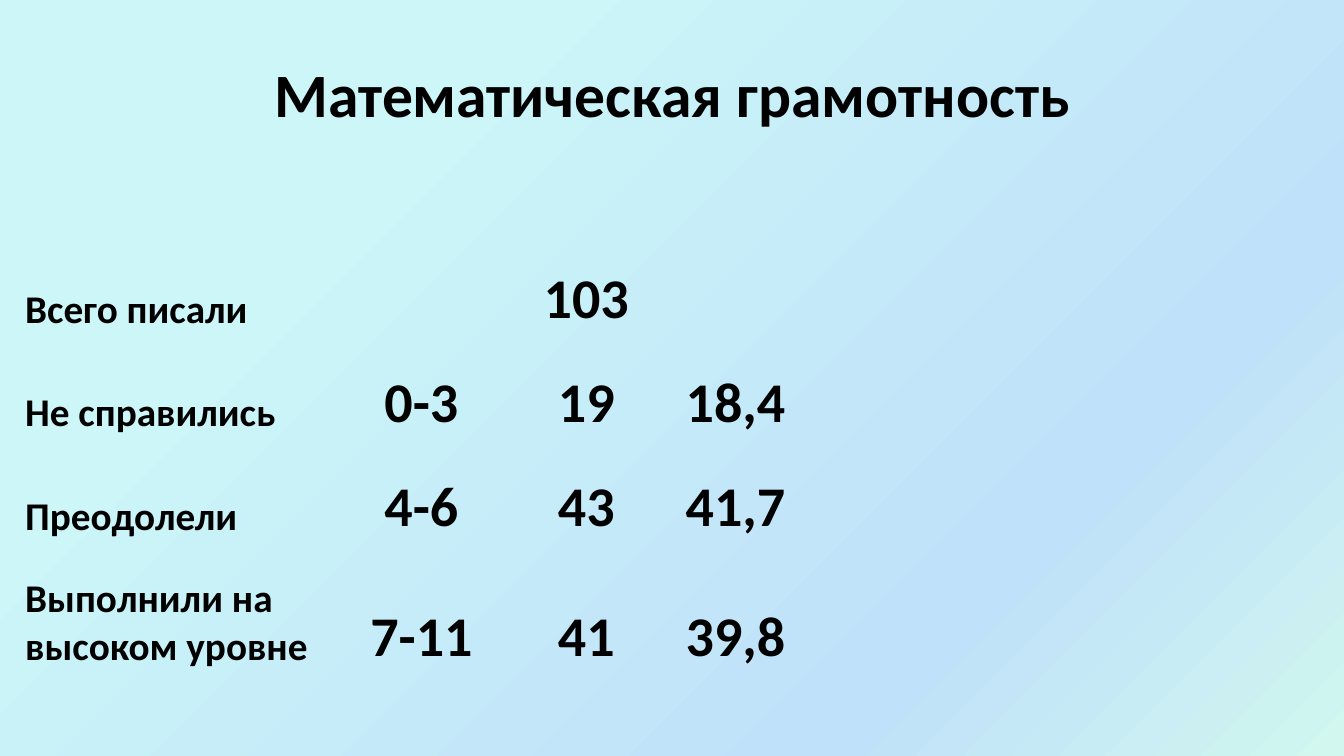
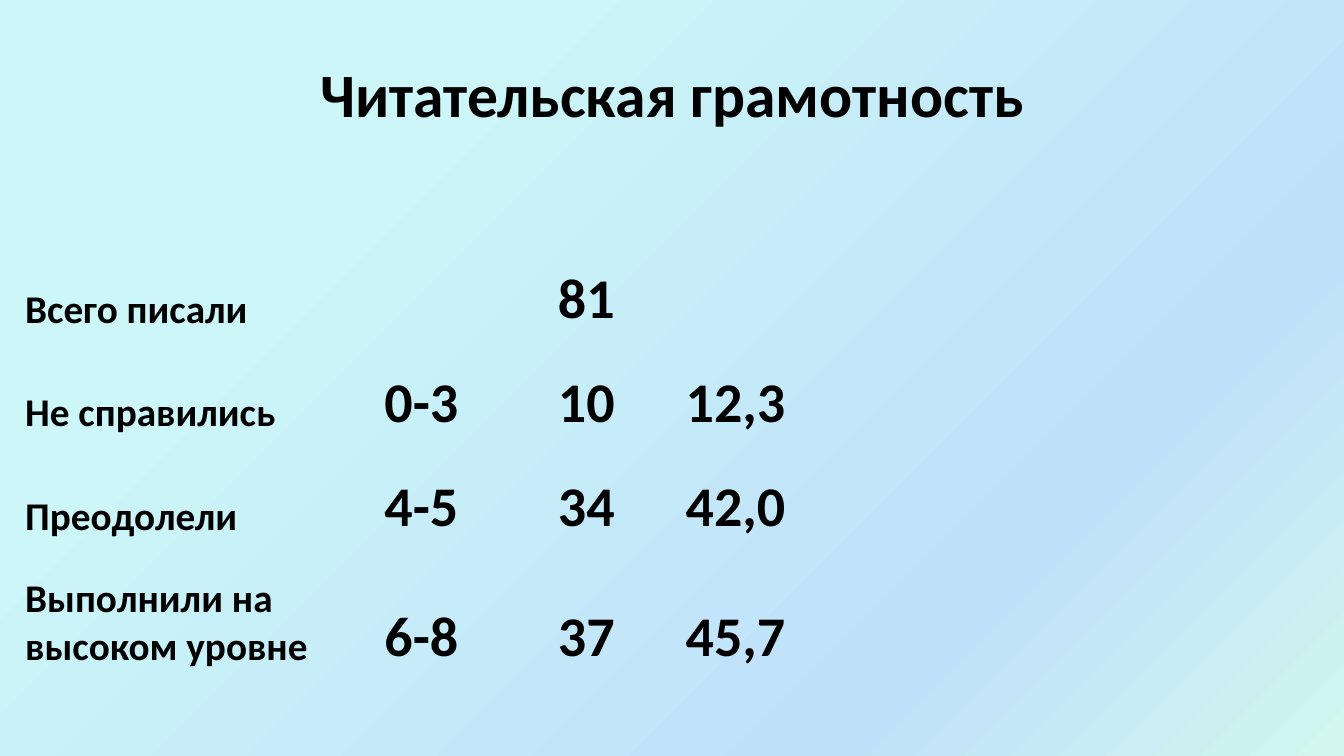
from copy import deepcopy

from pptx import Presentation
from pptx.dml.color import RGBColor
from pptx.enum.text import MSO_ANCHOR, PP_ALIGN
from pptx.util import Inches, Pt

LEFT, CENTER = PP_ALIGN.LEFT, PP_ALIGN.CENTER
MIDDLE, BOTTOM = MSO_ANCHOR.MIDDLE, MSO_ANCHOR.BOTTOM

FONT = "Calibri"
COLORS = {"text": "000000", "aqua": "CCF6F8", "blue": "BFE1F9", "mint": "D1F7EF"}
BACKGROUND = [("aqua", 0.25), ("blue", 0.75), ("mint", 1)]
NO_STYLE = "{2D5ABB26-0587-4C30-8999-92F81FD0307C}"

TITLE_BOX = (0.67, 0.3, 12, 1.25)
TABLE_BOX = (0.24, 2.28, 7.67, 4.38)
COL_WIDTHS = [3.17, 1.54, 1.73, 1.23]
ROW_HEIGHTS = [1.03, 1.03, 1.03, 1.29]
LABELS = ["Всего писали", "Не справились", "Преодолели", "Выполнили на высоком уровне"]

RESULTS = {
    "Математическая грамотность": [
        ("", "103", ""),
        ("0-3", "19", "18,4"),
        ("4-6", "43", "41,7"),
        ("7-11", "41", "39,8"),
    ],
    "Читательская грамотность": [
        ("", "81", ""),
        ("0-3", "10", "12,3"),
        ("4-5", "34", "42,0"),
        ("6-8", "37", "45,7"),
    ],
}


def write(tf, text, size=40, align=CENTER, color="text", bold=True):
    p = tf.paragraphs[0]
    p.alignment = align
    r = p.add_run()
    r.text = text
    r.font.name = FONT
    r.font.size = Pt(size)
    r.font.bold = bold
    r.font.color.rgb = RGBColor.from_string(COLORS[color])


def set_background(master):
    fill = master.background.fill
    fill.gradient()
    fill.gradient_angle = 315
    stop_list = master.element.xpath(".//p:bg//a:gsLst")[0]
    stop_list.append(deepcopy(stop_list[-1]))
    for stop, (color, position) in zip(fill.gradient_stops, BACKGROUND):
        stop.color.rgb = RGBColor.from_string(COLORS[color])
        stop.position = position


def add_title(s, text, box):
    sp = s.shapes.title
    sp.left, sp.top, sp.width, sp.height = map(Inches, box)
    tf = sp.text_frame
    tf.vertical_anchor = MIDDLE
    write(tf, text, size=44)


def fill_cell(cell, text, **style):
    cell.fill.background()
    cell.vertical_anchor = BOTTOM
    cell.margin_left = cell.margin_right = cell.margin_top = Inches(0.01)
    cell.margin_bottom = 0
    if text:
        write(cell.text_frame, text, **style)


def add_results(s, rows, box):
    frame = s.shapes.add_table(len(rows), len(COL_WIDTHS), *map(Inches, box))
    table = frame.table
    table.first_row = table.horz_banding = False
    frame._element.xpath(".//a:tableStyleId")[0].text = NO_STYLE
    for col, share in zip(table.columns, COL_WIDTHS):
        col.width = Inches(box[2] * share / sum(COL_WIDTHS))
    for row, share in zip(table.rows, ROW_HEIGHTS):
        row.height = Inches(box[3] * share / sum(ROW_HEIGHTS))
    for i, (label, values) in enumerate(zip(LABELS, rows)):
        fill_cell(table.cell(i, 0), label, size=28, align=LEFT)
        for j, value in enumerate(values, 1):
            fill_cell(table.cell(i, j), value)


def add_result_slide(prs, title, rows):
    s = prs.slides.add_slide(prs.slide_layouts[5])
    add_title(s, title, TITLE_BOX)
    add_results(s, rows, TABLE_BOX)


def main():
    prs = Presentation()
    prs.slide_width, prs.slide_height = Inches(13.33), Inches(7.5)
    set_background(prs.slide_master)
    for title, rows in RESULTS.items():
        add_result_slide(prs, title, rows)
    prs.save("out.pptx")


if __name__ == "__main__":
    main()
